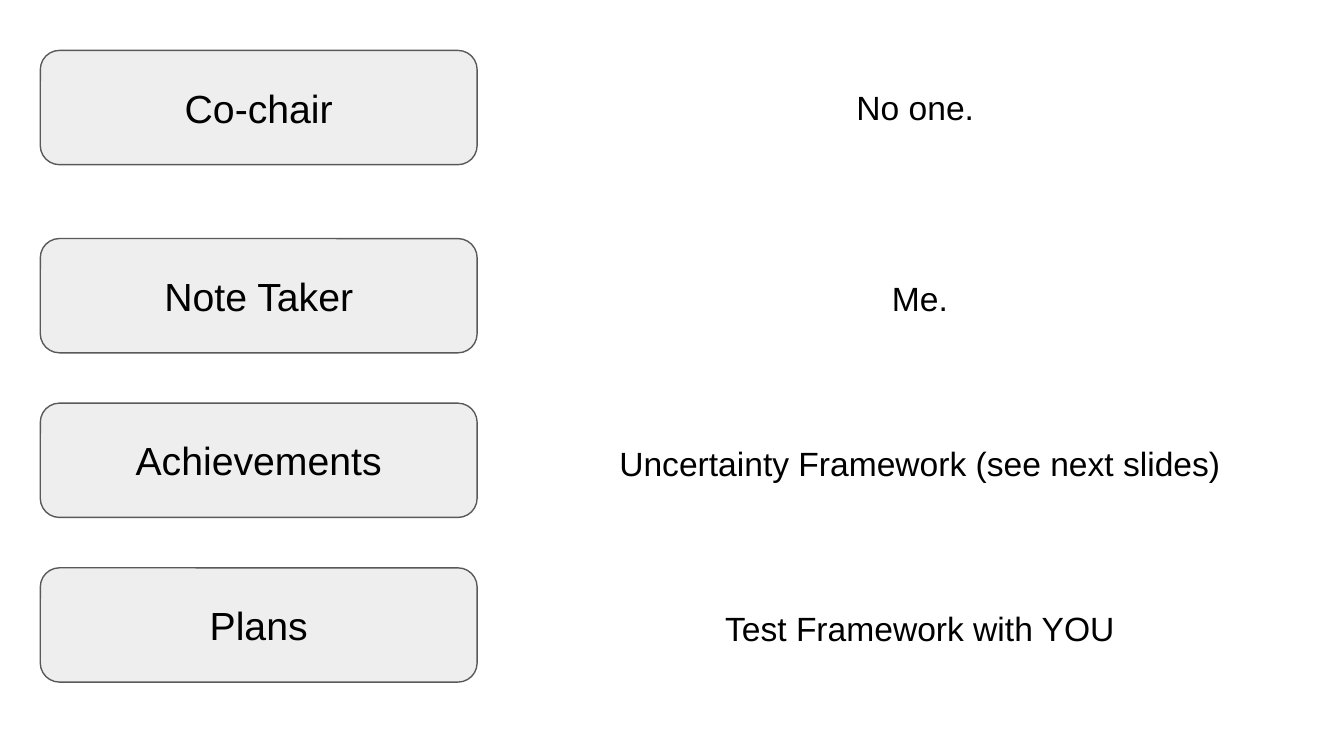
"""Build a slide of four labelled boxes, each with a short note beside it."""
from pptx import Presentation
from pptx.dml.color import RGBColor as RGB
from pptx.enum.shapes import MSO_SHAPE as SHAPE
from pptx.enum.text import MSO_ANCHOR as ANCHOR, PP_ALIGN as ALIGN
from pptx.util import Inches, Pt

COLORS = {"box": "EEEEEE", "edge": "595959", "text": "000000"}
INSET = Inches(0.1)
FRAME = {"word_wrap": True, "margin_left": INSET, "margin_right": INSET,
         "margin_top": INSET, "margin_bottom": INSET}

prs = Presentation()
prs.slide_width, prs.slide_height = Inches(10), Inches(5.625)
s = prs.slides.add_slide(prs.slide_layouts[6])
col, row = prs.slide_width / 40, prs.slide_height / 45


def grid(x, y, w, h):
    return [round(n) for n in (x * col, y * row, w * col, h * row)]


def write(sp, text, size, anchor):
    tf = sp.text_frame
    for name, value in {**FRAME, "vertical_anchor": anchor}.items():
        setattr(tf, name, value)
    p = tf.paragraphs[0]
    p.alignment = ALIGN.CENTER
    r = p.add_run()
    r.text = text
    for name, value in {"name": "Arial", "size": Pt(size)}.items():
        setattr(r.font, name, value)
    r.font.color.rgb = RGB.from_string(COLORS["text"])


first, step = 14.2, 9.8
items = [
    ("Co-chair", "No one. ", 3, 1.4),
    ("Note Taker", "Me.", first, 1.56),
    ("Achievements", "Uncertainty Framework (see next slides)", first + step, 1.56),
    ("Plans", "Test Framework with YOU", first + 2 * step, 1.56),
]

for label, note, top, drop in items:
    sp = s.shapes.add_shape(SHAPE.ROUNDED_RECTANGLE, *grid(1.2, top, 13, 6.8))
    sp.shadow.inherit = False
    sp.adjustments[0] = 0.167
    sp.fill.solid()
    sp.fill.fore_color.rgb = RGB.from_string(COLORS["box"])
    sp.line.color.rgb = RGB.from_string(COLORS["edge"])
    sp.line.width = Pt(0.75)
    write(sp, label, 21, ANCHOR.MIDDLE)
    write(s.shapes.add_textbox(*grid(16.72, top + drop, 21.32, 3.7)), note, 18, ANCHOR.TOP)

prs.save("out.pptx")
